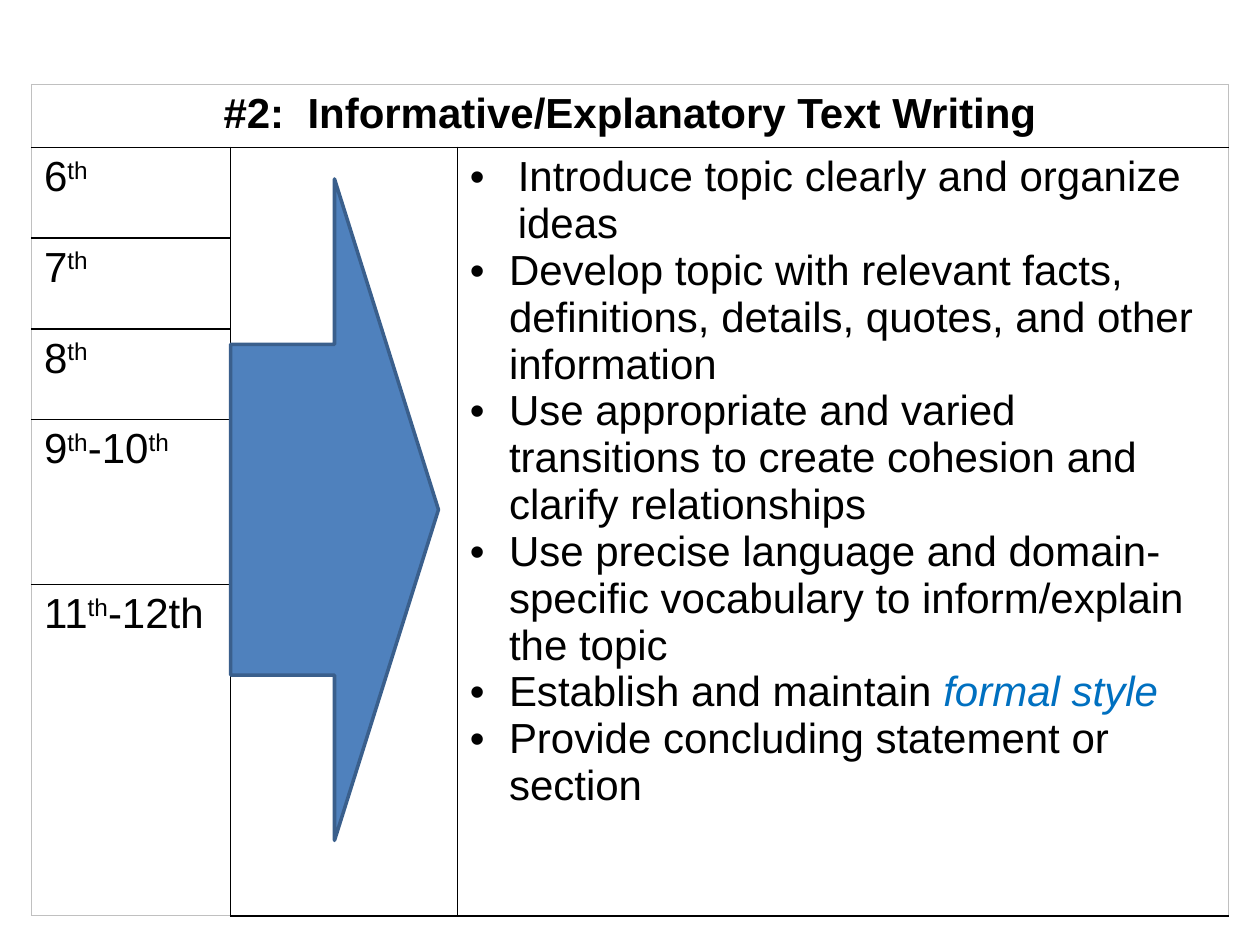
"""Build the informative writing slide: a grade table with an arrow."""
from lxml import etree
from pptx import Presentation, util as u
from pptx.dml.color import RGBColor
from pptx.enum import shapes, text
from pptx.oxml import ns

HUES = {"ink": "000000", "edge": "C0C0C0", "term": "0070C0",
        "arrow": "4F81BD", "rim": "3A5F8C"}
TITLE = "#2:  Informative/Explanatory Text Writing"
GRADES = [
    [("6", ""), ("th", "sup")],
    [("7", ""), ("th", "sup")],
    [("8", ""), ("th", "sup")],
    [("9", ""), ("th", "sup"), ("-10", ""), ("th", "sup")],
    [("11", ""), ("th", "sup"), ("-12th", "")],
]
GOALS = [
    [("Introduce topic clearly and organize ideas", "")],
    [("Develop topic with relevant facts, definitions, details, quotes, "
      "and other information", "")],
    [("Use appropriate and varied transitions to create cohesion and "
      "clarify relationships", "")],
    [("Use precise language and domain-specific vocabulary to "
      "inform/explain the topic", "")],
    [("Establish and maintain ", ""), ("formal style", "term")],
    [("Provide concluding statement or section", "")],
]
COLS = [1.58, 1.8, 6.12]
ROWS = [0.5, 0.72, 0.72, 0.72, 1.31, 2.63]
LEFT, TOP = 0.25, 0.67


def hue(name):
    return RGBColor.from_string(HUES[name])


def write(para, runs):
    for words, look in runs:
        run = para.add_run()
        run.text = words
        font = run.font
        font.name, font.size = "Arial", u.Pt(24)
        font.bold = look == "bold"
        font.italic = look == "term"
        font.color.rgb = hue("term" if look == "term" else "ink")
        if look == "sup":
            run._r.get_or_add_rPr().set("baseline", "30000")


def bullet(para, indent):
    props = para._p.get_or_add_pPr()
    props.set("marL", str(u.Inches(indent)))
    props.set("indent", str(-u.Inches(indent)))
    etree.SubElement(props, ns.qn("a:buFont")).set("typeface", "Arial")
    etree.SubElement(props, ns.qn("a:buChar")).set("char", "•")


def rule(cell, side, outer):
    line = etree.SubElement(cell._tc.get_or_add_tcPr(), ns.qn("a:ln" + side))
    line.set("w", str(u.Pt(0.75 if outer else 1)))
    fill = etree.SubElement(line, ns.qn("a:solidFill"))
    tone = etree.SubElement(fill, ns.qn("a:srgbClr"))
    tone.set("val", HUES["edge" if outer else "ink"])


def add_grid(slide):
    grid = slide.shapes.add_table(
        len(ROWS), len(COLS), u.Inches(LEFT), u.Inches(TOP),
        u.Inches(sum(COLS)), u.Inches(sum(ROWS))).table
    grid.first_row = grid.horz_banding = False
    for col, width in zip(grid.columns, COLS):
        col.width = u.Inches(width)
    for row, height in zip(grid.rows, ROWS):
        row.height = u.Inches(height)
    end, last = len(ROWS) - 1, len(COLS) - 1
    for r in range(len(ROWS)):
        for c in range(len(COLS)):
            cell = grid.cell(r, c)
            sides = {"L": c == 0, "R": c == last or r == 0,
                     "T": r == 0, "B": r == end}
            for side, outer in sides.items():
                rule(cell, side, outer)
            cell.fill.background()
    grid.cell(0, 0).merge(grid.cell(0, last))
    for c in range(1, len(COLS)):
        grid.cell(1, c).merge(grid.cell(end, c))
    return grid


def main():
    deck = Presentation()
    deck.slide_width, deck.slide_height = u.Inches(10), u.Inches(7.5)
    slide = deck.slides.add_slide(deck.slide_layouts[6])
    grid = add_grid(slide)

    head = grid.cell(0, 0).text_frame.paragraphs[0]
    head.alignment = text.PP_ALIGN.CENTER
    write(head, [(TITLE, "bold")])
    for r, runs in enumerate(GRADES, 1):
        write(grid.cell(r, 0).text_frame.paragraphs[0], runs)
    frame = grid.cell(1, 2).text_frame
    for i, runs in enumerate(GOALS):
        para = frame.add_paragraph() if i else frame.paragraphs[0]
        bullet(para, 0.31 if i else 0.38)
        write(para, runs)

    arrow = slide.shapes.add_shape(
        shapes.MSO_SHAPE.RIGHT_ARROW, u.Inches(LEFT + COLS[0]),
        u.Inches(1.42), u.Inches(1.65), u.Inches(5.25))
    arrow.shadow.inherit = False
    arrow.fill.solid()
    arrow.fill.fore_color.rgb = hue("arrow")
    arrow.line.color.rgb = hue("rim")
    arrow.line.width = u.Pt(2)
    deck.save("out.pptx")


if __name__ == "__main__":
    main()
